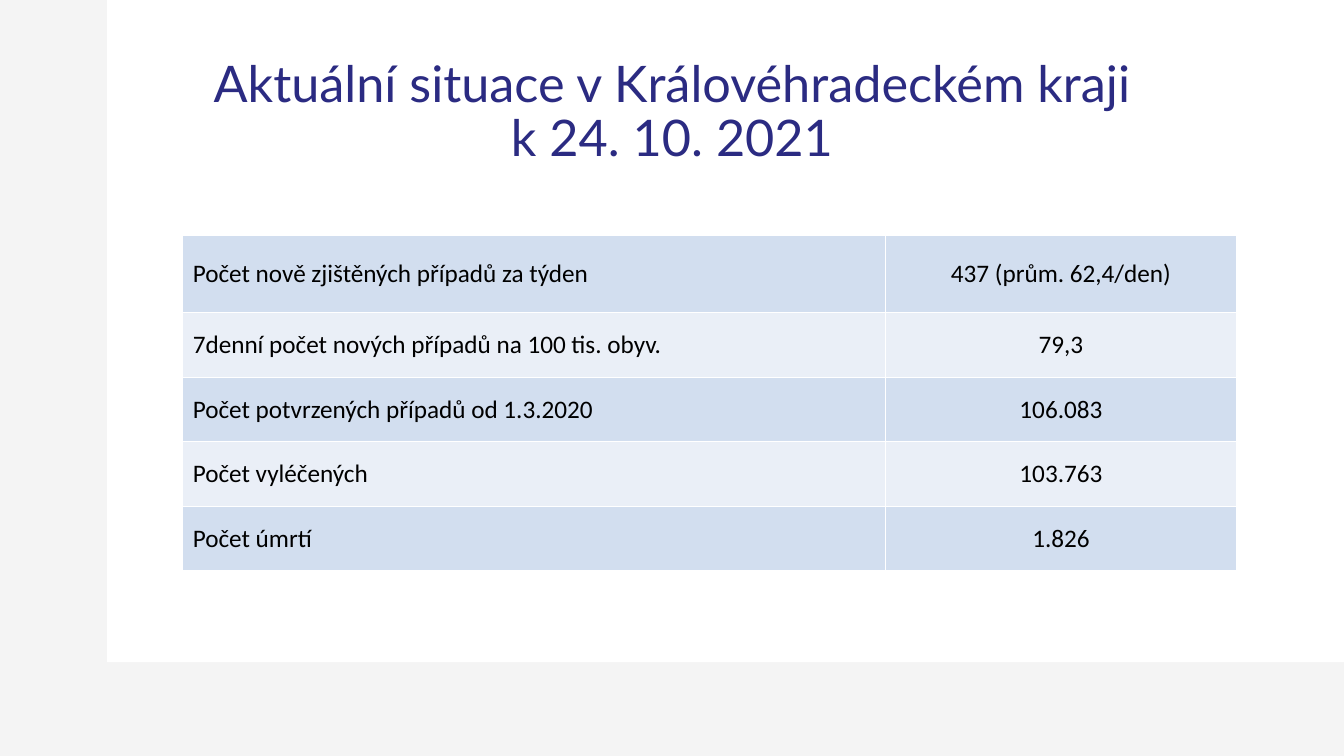
from pptx import Presentation
from pptx.dml.color import RGBColor
from pptx.enum.shapes import MSO_SHAPE
from pptx.enum.text import MSO_ANCHOR, PP_ALIGN
from pptx.util import Pt

COLORS = {
    "backdrop": "F4F4F4",
    "panel": "FFFFFF",
    "title": "2B2B82",
    "text": "000000",
    "band_dark": "D2DEEF",
    "band_light": "EAEFF7",
}
STATISTICS = [
    ("Počet nově zjištěných případů za týden", "437 (prům. 62,4/den)"),
    ("7denní počet nových případů na 100 tis. obyv.", "79,3"),
    ("Počet potvrzených případů od 1.3.2020", "106.083"),
    ("Počet vyléčených", "103.763"),
    ("Počet úmrtí", "1.826"),
]


def color(name):
    return RGBColor.from_string(COLORS[name])


prs = Presentation()
prs.slide_width, prs.slide_height = Pt(960), Pt(540)
slide = prs.slides.add_slide(prs.slide_layouts[5])
slide.background.fill.solid()
slide.background.fill.fore_color.rgb = color("backdrop")

# White panel, placed behind the title
panel = slide.shapes.add_shape(MSO_SHAPE.RECTANGLE, Pt(76.5), Pt(0), Pt(883.5), Pt(473))
panel.shadow.inherit = False
panel.fill.solid()
panel.fill.fore_color.rgb = color("panel")
panel.line.fill.background()
slide.shapes._spTree.insert(2, panel._element)

# Title
title = slide.shapes.title
title.left, title.top, title.width, title.height = Pt(66), Pt(28.5), Pt(828), Pt(104.5)
title.text_frame.text = "Aktuální situace v Královéhradeckém kraji\vk 24. 10. 2021"
title.text_frame.vertical_anchor = MSO_ANCHOR.MIDDLE
heading = title.text_frame.paragraphs[0]
heading.alignment = PP_ALIGN.CENTER
heading.line_spacing = 0.9
heading.font.name = "Lato"
heading.font.size = Pt(36)
heading.font.color.rgb = color("title")

# Table of regional statistics
table = slide.shapes.add_table(
    len(STATISTICS), 2, Pt(130.5), Pt(167.8), Pt(753), Pt(240)
).table
table.first_row = False
table.columns[0].width, table.columns[1].width = Pt(501.75), Pt(251.25)
for row_no, values in enumerate(STATISTICS):
    table.rows[row_no].height = Pt(46.1) if row_no == 0 else Pt(46.1)
    table.rows[row_no].height = Pt(55.6 if row_no == 0 else 46.1)
    for col_no, value in enumerate(values):
        cell = table.cell(row_no, col_no)
        cell.text = value
        cell.vertical_anchor = MSO_ANCHOR.MIDDLE
        cell.fill.solid()
        cell.fill.fore_color.rgb = color("band_light" if row_no % 2 else "band_dark")
        entry = cell.text_frame.paragraphs[0]
        entry.alignment = PP_ALIGN.CENTER if col_no else PP_ALIGN.LEFT
        entry.font.name = "Calibri"
        entry.font.size = Pt(18)
        entry.font.color.rgb = color("text")

prs.save("out.pptx")
